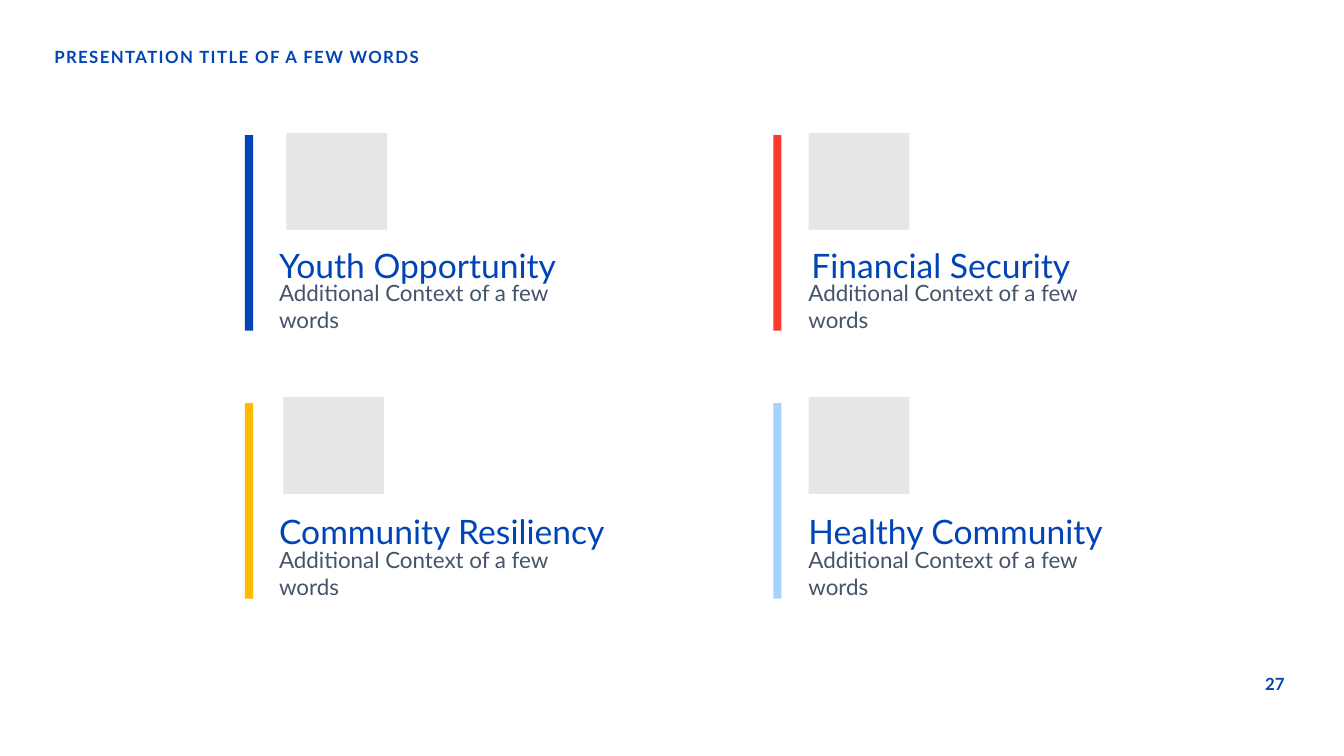
from pptx import Presentation
from pptx.dml.color import RGBColor
from pptx.enum.shapes import MSO_SHAPE as SHAPE
from pptx.enum.text import MSO_ANCHOR as ANCHOR, MSO_AUTO_SIZE as AUTO, PP_ALIGN as ALIGN
from pptx.util import Inches, Pt

BLUE = RGBColor(0x00, 0x44, 0xB5)
RED = RGBColor(0xFD, 0x37, 0x2C)
YELLOW = RGBColor(0xFF, 0xBA, 0x00)
SKY = RGBColor(0xA7, 0xD2, 0xFF)
GRAY = RGBColor(0xE7, 0xE6, 0xE6)
SLATE = RGBColor(0x44, 0x54, 0x6A)

CONTEXT = "Additional Context of a few words"
BAR_X = (2.43, 7.67)
TEXT_X = (2.67, 7.92)
BAR_Y = (1.34, 4)
ICON_Y = (1.32, 3.94)
HEADING_Y = (2.38, 5.02)
CONTEXT_Y = (2.85, 5.5)

# column, row, heading, heading left, heading width, icon left, bar colour
TOPICS = [
    (0, 0, "Youth Opportunity", 2.67, 3.06, 2.84, BLUE),
    (1, 0, "Financial Security", 7.95, 3.06, 8.02, RED),
    (0, 1, "Community Resiliency", 2.67, 3.44, 2.81, YELLOW),
    (1, 1, "Healthy Community", 7.92, 3.57, 8.02, SKY),
]


def add_rect(s, x, y, w, h, color):
    """Add a plain filled rectangle without outline."""
    sp = s.shapes.add_shape(SHAPE.RECTANGLE, Inches(x), Inches(y), Inches(w), Inches(h))
    sp.shadow.inherit = False
    sp.fill.solid()
    sp.fill.fore_color.rgb = color
    sp.line.fill.background()


def add_text(s, x, y, w, h, text, size, color, bold=False, anchor=ANCHOR.MIDDLE, align=ALIGN.LEFT):
    """Add a one-paragraph text box and return its paragraph."""
    tf = s.shapes.add_textbox(Inches(x), Inches(y), Inches(w), Inches(h)).text_frame
    frame = {"word_wrap": True, "auto_size": AUTO.SHAPE_TO_FIT_TEXT, "vertical_anchor": anchor}
    for name, value in frame.items():
        setattr(tf, name, value)
    p = tf.paragraphs[0]
    p.alignment = align
    r = p.add_run()
    r.text = text
    for name, value in {"name": "Lato", "size": Pt(size), "bold": bold}.items():
        setattr(r.font, name, value)
    r.font.color.rgb = color
    return p


def add_topic(s, col, row, heading, heading_x, heading_w, icon_x, color):
    """Add one topic: bar, icon block, heading and context."""
    add_rect(s, icon_x, ICON_Y[row], 1, 0.96, GRAY)
    add_text(s, TEXT_X[col], CONTEXT_Y[row], 3.44, 0.37, CONTEXT, 16, SLATE)
    add_text(s, heading_x, HEADING_Y[row], heading_w, 0.5, heading, 24, BLUE)
    add_rect(s, BAR_X[col], BAR_Y[row], 0.08, 1.94, color)


def main():
    """Build the slide and save it."""
    prs = Presentation()
    prs.slide_width, prs.slide_height = Inches(13.33), Inches(7.5)
    s = prs.slides.add_slide(prs.slide_layouts[6])
    p = add_text(s, 0.44, 0.44, 5.49, 0.29, "PRESENTATION TITLE OF A FEW WORDS",
                 12, BLUE, True, ANCHOR.TOP)
    p.line_spacing = 0.9
    p.runs[0].font._element.set("spc", "100")
    add_text(s, 12.42, 6.63, 0.42, 0.3, "27", 12, BLUE, True, ANCHOR.TOP, ALIGN.RIGHT)
    for topic in TOPICS:
        add_topic(s, *topic)
    prs.save("out.pptx")


if __name__ == "__main__":
    main()
